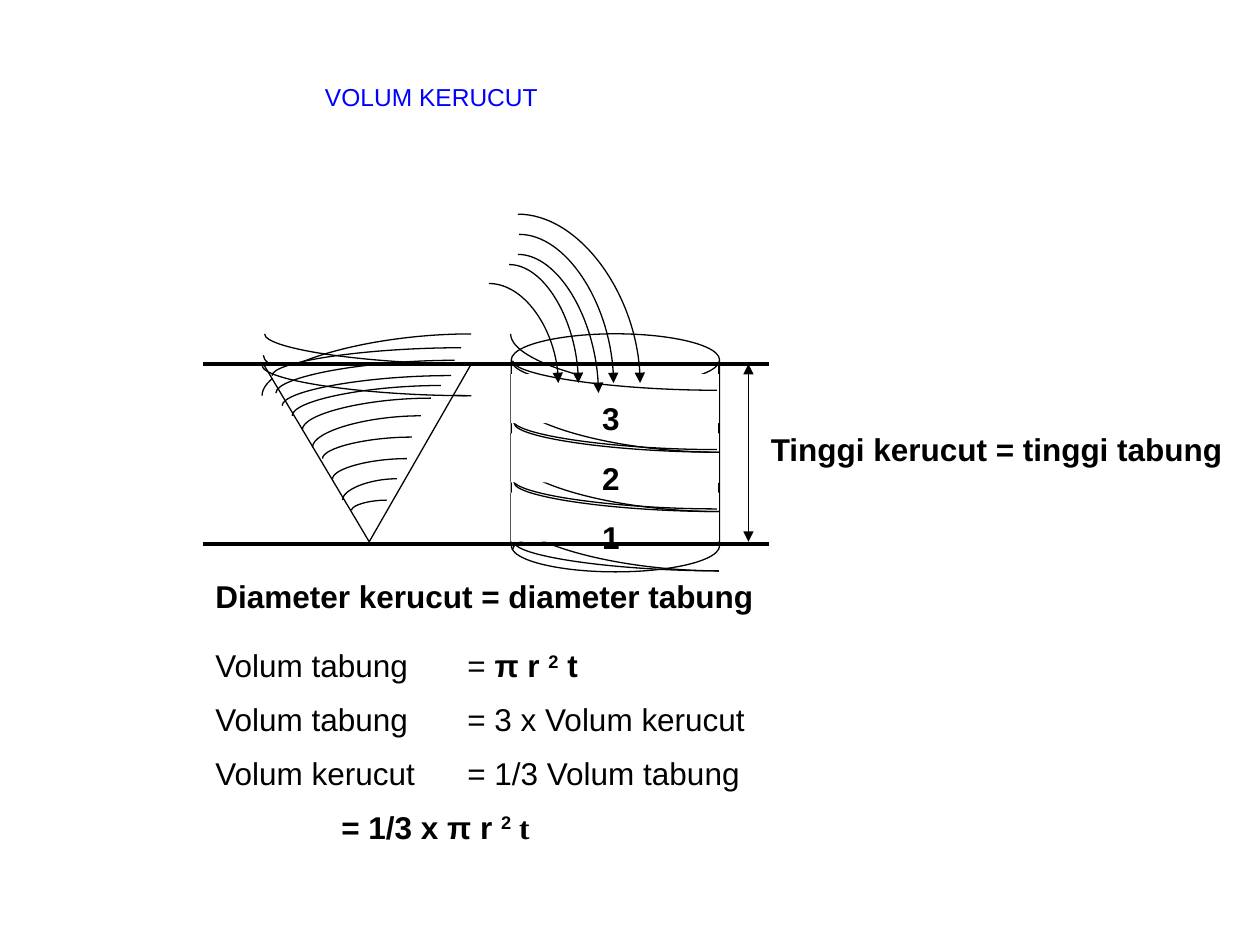
import pptx
import pptx.dml.color
import pptx.enum.shapes
import pptx.oxml.ns
import pptx.oxml.xmlchemy
import pptx.util
from lxml import etree

Pt = pptx.util.Pt
qn = pptx.oxml.ns.qn
CONNECTOR = pptx.enum.shapes.MSO_CONNECTOR
SHAPE = pptx.enum.shapes.MSO_SHAPE

COLORS = {"ink": "000000", "paper": "FFFFFF", "title": "0000FF"}
LEFT = 116
CONE_TOP, CONE_TIP = 208, 309.6
CAN_LEFT, CAN_RIGHT = 291.8, 410.8
LAYER_BOTTOM, LAYER_STEP = 326.2, 33.9

# Start (right, top) and end (left, bottom) of each stripe in the cone
CONE_STRIPES = [
    (263.5, 198.7, 155.5, 214.6), (259.9, 205.9, 157.7, 224.6),
    (257.8, 214.6, 161.3, 231.8), (252, 220.3, 167, 237.6),
    (246.2, 227.5, 172.8, 245.5), (240.5, 237.6, 178.6, 255.6),
    (235.4, 249.8, 184.3, 262.1), (232.6, 262.1, 190.1, 273.6),
    (226.8, 273.6, 195.8, 285.8), (221, 285.8, 200.9, 291.6),
]
POURING_ARROWS = [
    (279.4, 162, 319, 218.9), (290.9, 151.2, 330.5, 218.9),
    (295.9, 145.4, 342, 224.6), (296.6, 133.9, 350.6, 218.9),
    (295.9, 122.4, 365.8, 218.9),
]


def color(name):
    return pptx.dml.color.RGBColor.from_string(COLORS[name])


def add_line(slide, x1, y1, x2, y2, width=0.75, kind=CONNECTOR.STRAIGHT, arrows=()):
    """Draw a connector; arrows holds any of headEnd and tailEnd, in that order."""
    connector = slide.shapes.add_connector(kind, Pt(x1), Pt(y1), Pt(x2), Pt(y2))
    connector.line.color.rgb = color("ink")
    connector.line.width = Pt(width)
    properties = connector._element.spPr
    for end in arrows:
        etree.SubElement(properties.find(qn("a:ln")), qn(f"a:{end}"), type="triangle")
    etree.SubElement(properties, qn("a:effectLst"))
    return connector


def add_arc(slide, x1, y1, x2, y2, arrows=()):
    """Draw a quarter bend that leaves horizontally and arrives vertically."""
    connector = add_line(slide, x1, y1, x2, y2, kind=CONNECTOR.CURVE, arrows=arrows)
    properties = connector._element.spPr
    properties.find(qn("a:prstGeom")).set("prst", "curvedConnector2")
    if x2 < x1 and y2 < y1:
        # A double flip is stored as a half turn
        transform = properties.find(qn("a:xfrm"))
        for flip in ("flipH", "flipV"):
            del transform.attrib[flip]
        transform.set("rot", "10800000")


def style_shape(shape, fill=None, outlined=True):
    shape.shadow.inherit = False
    if fill:
        shape.fill.solid()
        shape.fill.fore_color.rgb = color(fill)
    else:
        shape.fill.background()
    if outlined:
        shape.line.color.rgb = color("ink")
        shape.line.width = Pt(0.75)
    else:
        shape.line.fill.background()


def add_text(slide, left, top, width, height, paragraphs, size=18, ink="ink", bold=None):
    """Each paragraph is a list of runs: (text, bold, raised, font name)."""
    box = slide.shapes.add_textbox(Pt(left), Pt(top), Pt(width), Pt(height))
    frame = box.text_frame
    frame.word_wrap = True
    for index, runs in enumerate(paragraphs):
        paragraph = frame.paragraphs[0] if index == 0 else frame.add_paragraph()
        paragraph.space_before = Pt(9 if index else 0)
        paragraph.font.size = Pt(size)
        paragraph.font.name = "Arial"
        paragraph.font.color.rgb = color(ink)
        paragraph.font.bold = bold
        for text, run_bold, raised, font_name in runs:
            run = paragraph.add_run()
            run.text = text
            run.font.bold = run_bold
            run.font.name = font_name
            if raised:
                run._r.get_or_add_rPr().set("baseline", "30000")


def plain(text):
    return [(text, None, False, None)]


def formula(start, last_font=None):
    return [(start, True, False, None), ("2", True, True, None),
            (" t", True, False, last_font)]


def draw_cone(slide):
    add_arc(slide, 269.3, 226.1, 150.5, 203)
    add_arc(slide, 269.3, 190.8, 149.8, 226.1)
    builder = slide.shapes.build_freeform(Pt(150.5), Pt(CONE_TOP))
    builder.add_line_segments(
        [(Pt(211), Pt(CONE_TIP)), (Pt(269.3), Pt(CONE_TOP))], close=False)
    style_shape(builder.convert_to_shape(), "paper")
    add_arc(slide, 269.3, CONE_TOP, 151.2, 190.8)
    for stripe in CONE_STRIPES:
        add_arc(slide, *stripe)
    add_arc(slide, 267.1, 226.1, 149.8, 208.8)


def draw_layer(slide, bottom):
    wall_bottom = bottom - 16.6
    add_arc(slide, CAN_RIGHT, bottom, CAN_LEFT, bottom - 33.6)
    add_line(slide, CAN_LEFT, bottom - 44.6, CAN_LEFT, wall_bottom)
    add_line(slide, CAN_RIGHT, bottom - 50.4, CAN_RIGHT, wall_bottom)
    add_arc(slide, CAN_RIGHT, bottom, 293.8, wall_bottom)
    band = slide.shapes.add_shape(
        SHAPE.RECTANGLE, Pt(CAN_LEFT), Pt(bottom - 44.6), Pt(119), Pt(28))
    style_shape(band, "paper", outlined=False)
    add_arc(slide, 409.7, bottom - 35.4, 293, bottom - 52.2)


def draw_cylinder(slide):
    can = slide.shapes.add_shape(
        SHAPE.CAN, Pt(292.2), Pt(190.8), Pt(119), Pt(136))
    can.adjustments[0] = 0.25
    style_shape(can)
    add_arc(slide, CAN_RIGHT, 295.9, 293, 313.9)
    for level in range(3):
        if level == 2:
            add_arc(slide, CAN_RIGHT, 224.2, CAN_LEFT, 190.8)
        draw_layer(slide, LAYER_BOTTOM - level * LAYER_STEP)


def draw_texts(slide):
    add_text(slide, 433.4, 242, 286.6, 28.8,
             [plain("Tinggi kerucut = tinggi tabung")], bold=True)
    for level in range(3):
        add_text(slide, 337, 292.4 - level * LAYER_STEP, 34, 28.8,
                 [plain(str(level + 1))], bold=True)
    add_text(slide, LEFT, 365.8, 238.3, 28.8,
             [plain("Volum tabung \t= ") + formula("π r ")])
    add_text(slide, LEFT, 396.7, 465, 93.6, [
        plain("Volum tabung \t= 3 x Volum kerucut"),
        plain("Volum kerucut \t= 1/3 Volum tabung"),
        plain("\t\t") + formula("= 1/3 x π r ", "Times New Roman"),
    ])
    add_text(slide, 178.6, 43.2, 387.4, 51, [plain("VOLUM KERUCUT")],
             size=14, ink="title")
    add_text(slide, LEFT, 326.2, 357, 28.8,
             [plain("Diameter kerucut = diameter tabung")], bold=True)


def main():
    presentation = pptx.Presentation()
    presentation.slide_width, presentation.slide_height = Pt(720), Pt(540)
    slide = presentation.slides.add_slide(presentation.slide_layouts[6])
    add_line(slide, LEFT, 311, 439.2, 311, width=2.25)
    draw_cone(slide)
    draw_cylinder(slide)
    for arrow in POURING_ARROWS:
        add_arc(slide, *arrow, arrows=["tailEnd"])
    add_line(slide, LEFT, CONE_TOP, 439.2, CONE_TOP, width=2.25)
    add_line(slide, 427.7, CONE_TOP, 427.7, CONE_TIP, arrows=["headEnd", "tailEnd"])
    draw_texts(slide)
    presentation.save("out.pptx")


if __name__ == "__main__":
    main()
